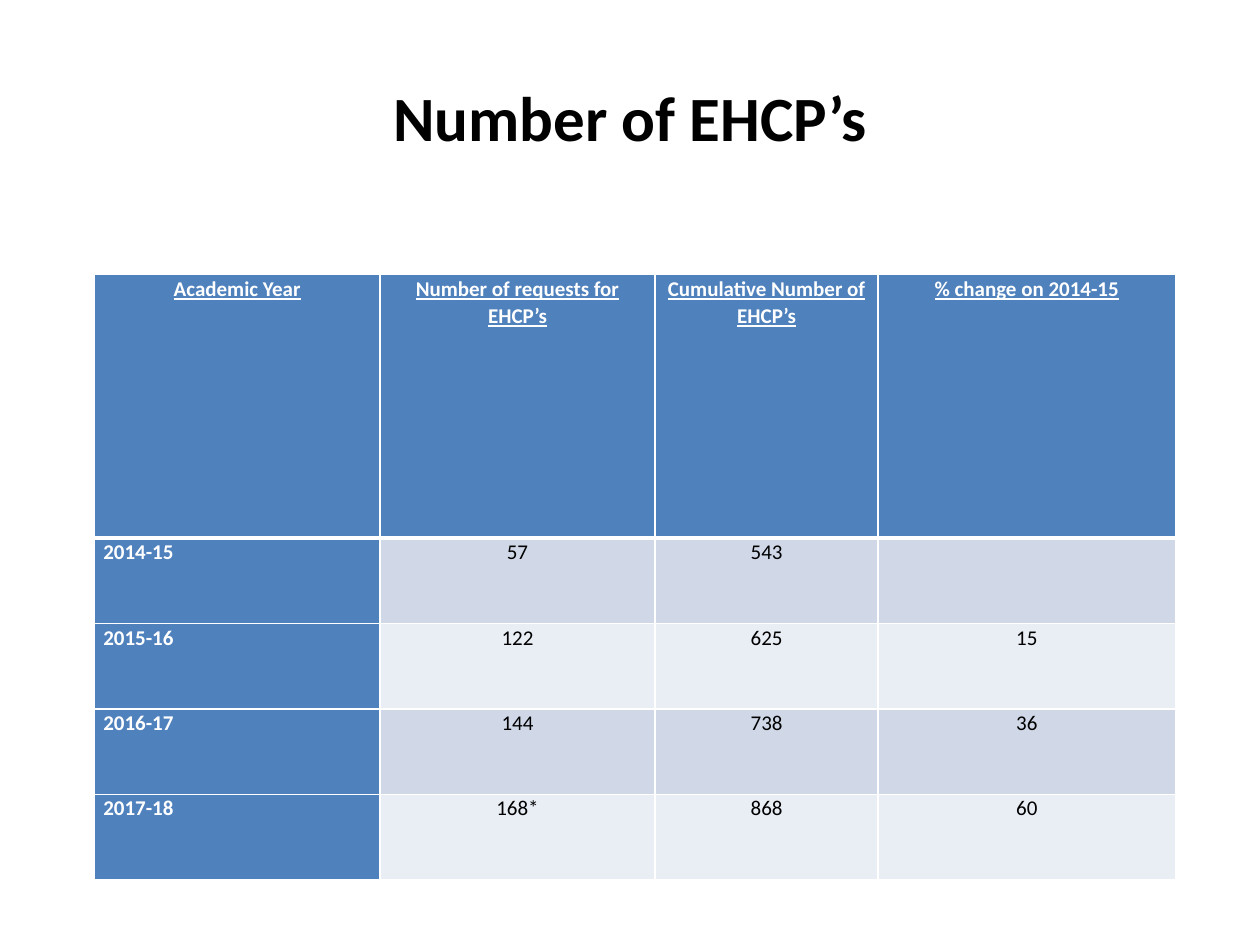
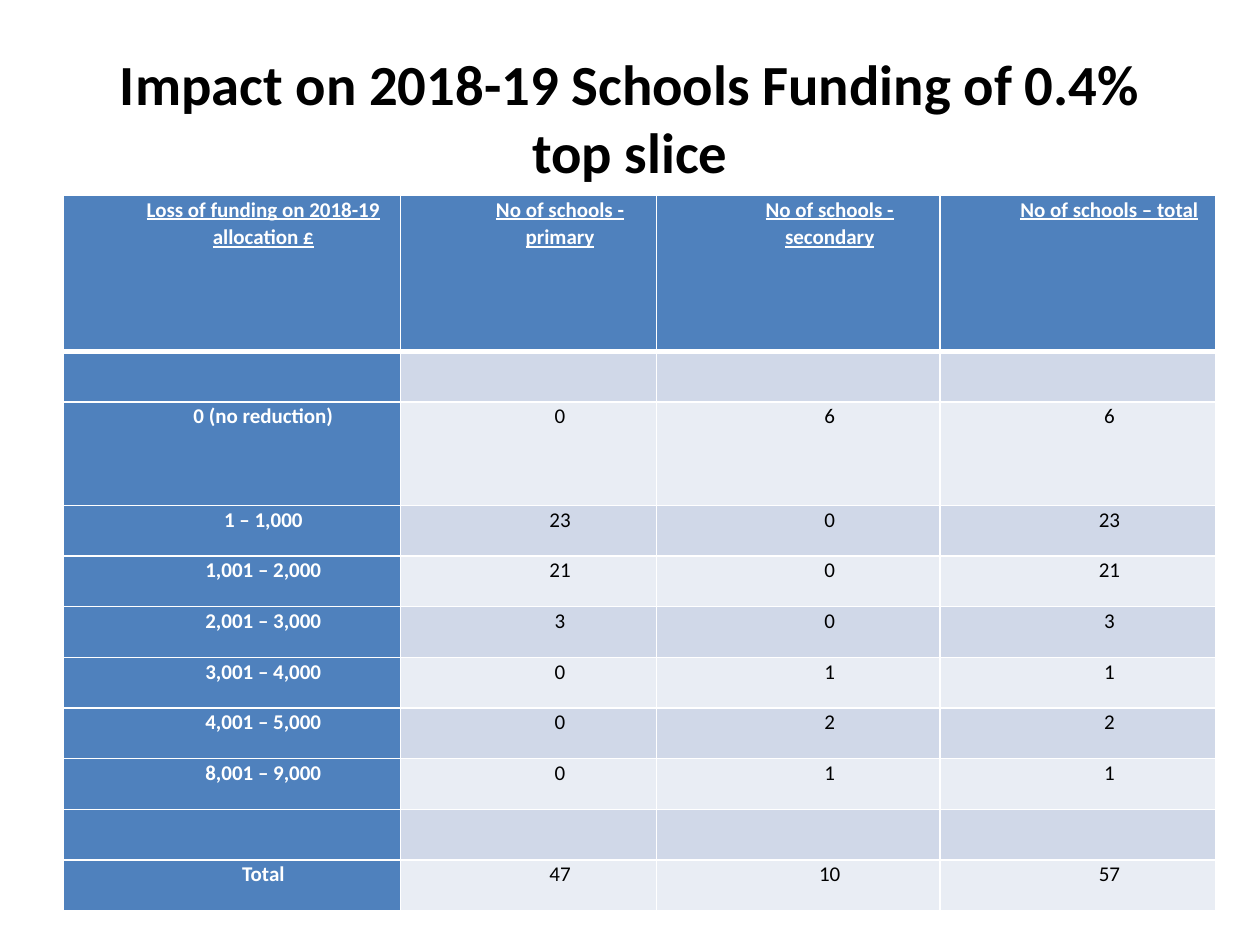
from dataclasses import dataclass

from lxml.etree import SubElement
from pptx import Presentation
from pptx.dml.color import RGBColor
from pptx.enum.text import MSO_ANCHOR, PP_ALIGN
from pptx.oxml.ns import qn
from pptx.slide import Slide
from pptx.table import _Cell
from pptx.text.text import _Paragraph
from pptx.util import Inches, Pt

WHITE = RGBColor(0xFF, 0xFF, 0xFF)
BLACK = RGBColor(0x00, 0x00, 0x00)
HEADING_BLUE = RGBColor(0x4F, 0x81, 0xBD)
BAND_DARK = RGBColor(0xD0, 0xD8, 0xE8)
BAND_LIGHT = RGBColor(0xE9, 0xED, 0xF4)

SLIDE_WIDTH, SLIDE_HEIGHT = Inches(10), Inches(7.5)
GRID_COLUMN = SLIDE_WIDTH / 100
GRID_ROW = SLIDE_HEIGHT / 75

TITLE_FRAME = (5, 3, 90, 12.5)  # left, top, width, height on the grid
FONT = "Calibri"
HEADER_FORMAT = {"size": Pt(12), "bold": True, "underline": True}
LABEL_FORMAT = {"size": Pt(12), "bold": True}
VALUE_FORMAT = {"size": Pt(12), "bold": False}
CELL_FORMAT = {
    "margin_left": Inches(0.07),
    "margin_right": Inches(0.07),
    "margin_top": 0,
    "margin_bottom": 0,
}
THIN, THICK = Pt(1), Pt(3)


@dataclass(frozen=True)
class TableSlide:
    """A titled table; left, top, widths and heights count grid units."""
    title: str
    title_size: float
    left: float
    top: float
    column_widths: list[float]
    row_heights: list[float]
    rows: list[list[str]]
    label_alignment: PP_ALIGN = PP_ALIGN.CENTER
    indent: float = 0


EHCP_NUMBERS = TableSlide(
    title="Number of EHCP’s",
    title_size=36,
    left=7.5,
    top=21.8,
    column_widths=[22.65, 21.85, 17.7, 23.6],
    row_heights=[20.9] + [6.78] * 4,
    rows=[
        ["Academic Year", "Number of requests for EHCP’s",
         "Cumulative Number of EHCP’s", "% change on 2014-15"],
        ["2014-15", "57", "543", ""],
        ["2015-16", "122", "625", "15"],
        ["2016-17", "144", "738", "36"],
        ["2017-18", "168*", "868", "60"],
    ],
    label_alignment=PP_ALIGN.LEFT,
)

FUNDING_IMPACT = TableSlide(
    title="Impact on 2018-19 Schools Funding of 0.4% top slice",
    title_size=32.4,
    left=5,
    top=15.5,
    column_widths=[26.8, 20.3, 22.5, 21.9],
    row_heights=[12.4, 4.02, 8.2] + [4.02] * 8,
    rows=[
        ["Loss of funding on 2018-19 allocation £", "No of schools - primary",
         "No of schools - secondary", "No of schools – total"],
        [""] * 4,
        ["0 (no reduction)", "0", "6", "6"],
        ["1 – 1,000", "23", "0", "23"],
        ["1,001 – 2,000", "21", "0", "21"],
        ["2,001 – 3,000", "3", "0", "3"],
        ["3,001 – 4,000", "0", "1", "1"],
        ["4,001 – 5,000", "0", "2", "2"],
        ["8,001 – 9,000", "0", "1", "1"],
        [""] * 4,
        ["Total", "47", "10", "57"],
    ],
    indent=5,
)


def across(columns: float) -> int:
    return round(columns * GRID_COLUMN)


def down(rows: float) -> int:
    return round(rows * GRID_ROW)


def write(paragraph: _Paragraph, text: str, color: RGBColor, alignment: PP_ALIGN,
          font_format: dict) -> None:
    paragraph.alignment = alignment
    run = paragraph.add_run()
    run.text = text
    run.font.color.rgb = color
    for attribute, value in {"name": FONT, **font_format}.items():
        setattr(run.font, attribute, value)


def add_title(slide: Slide, text: str, size: float) -> None:
    left, top, width, height = TITLE_FRAME
    frame = slide.shapes.add_textbox(
        across(left), down(top), across(width), down(height)).text_frame
    frame.word_wrap = True
    frame.vertical_anchor = MSO_ANCHOR.MIDDLE
    write(frame.paragraphs[0], text, BLACK, PP_ALIGN.CENTER,
          {"size": Pt(size), "bold": True})


def add_borders(cell: _Cell, row: int) -> None:
    """White rules, thick between the header and the first body row."""
    widths = {
        "a:lnL": THIN,
        "a:lnR": THIN,
        "a:lnT": THICK if row == 1 else THIN,
        "a:lnB": THICK if row == 0 else THIN,
    }
    properties = cell._tc.get_or_add_tcPr()
    for side, width in widths.items():
        line = SubElement(properties, qn(side), w=str(width))
        fill = SubElement(line, qn("a:solidFill"))
        SubElement(fill, qn("a:srgbClr"), val=str(WHITE))


def fill_cell(cell: _Cell, row: int, column: int, content: TableSlide) -> None:
    is_heading = row == 0 or column == 0
    for attribute, value in CELL_FORMAT.items():
        setattr(cell, attribute, value)
    add_borders(cell, row)
    cell.fill.solid()
    band = BAND_DARK if row % 2 else BAND_LIGHT
    cell.fill.fore_color.rgb = HEADING_BLUE if is_heading else band

    text = content.rows[row][column]
    if not text:
        return
    is_row_label = column == 0 and row > 0
    alignment = content.label_alignment if is_row_label else PP_ALIGN.CENTER
    font_format = (HEADER_FORMAT if row == 0
                   else LABEL_FORMAT if is_row_label else VALUE_FORMAT)
    paragraph = cell.text_frame.paragraphs[0]
    paragraph.line_spacing = 1.07
    paragraph._p.get_or_add_pPr().set("marL", str(across(content.indent)))
    write(paragraph, text, WHITE if is_heading else BLACK, alignment, font_format)


def add_grid_table(slide: Slide, content: TableSlide) -> None:
    table = slide.shapes.add_table(
        len(content.row_heights), len(content.column_widths),
        across(content.left), down(content.top),
        across(sum(content.column_widths)), down(sum(content.row_heights))).table
    for column, width in zip(table.columns, content.column_widths):
        column.width = across(width)
    for row, height in zip(table.rows, content.row_heights):
        row.height = down(height)
    for row in range(len(content.row_heights)):
        for column in range(len(content.column_widths)):
            fill_cell(table.cell(row, column), row, column, content)


def main() -> None:
    presentation = Presentation()
    presentation.slide_width = SLIDE_WIDTH
    presentation.slide_height = SLIDE_HEIGHT
    blank_layout = presentation.slide_layouts[6]
    for content in (EHCP_NUMBERS, FUNDING_IMPACT):
        slide = presentation.slides.add_slide(blank_layout)
        add_title(slide, content.title, content.title_size)
        add_grid_table(slide, content)
    presentation.save("out.pptx")


if __name__ == "__main__":
    main()
